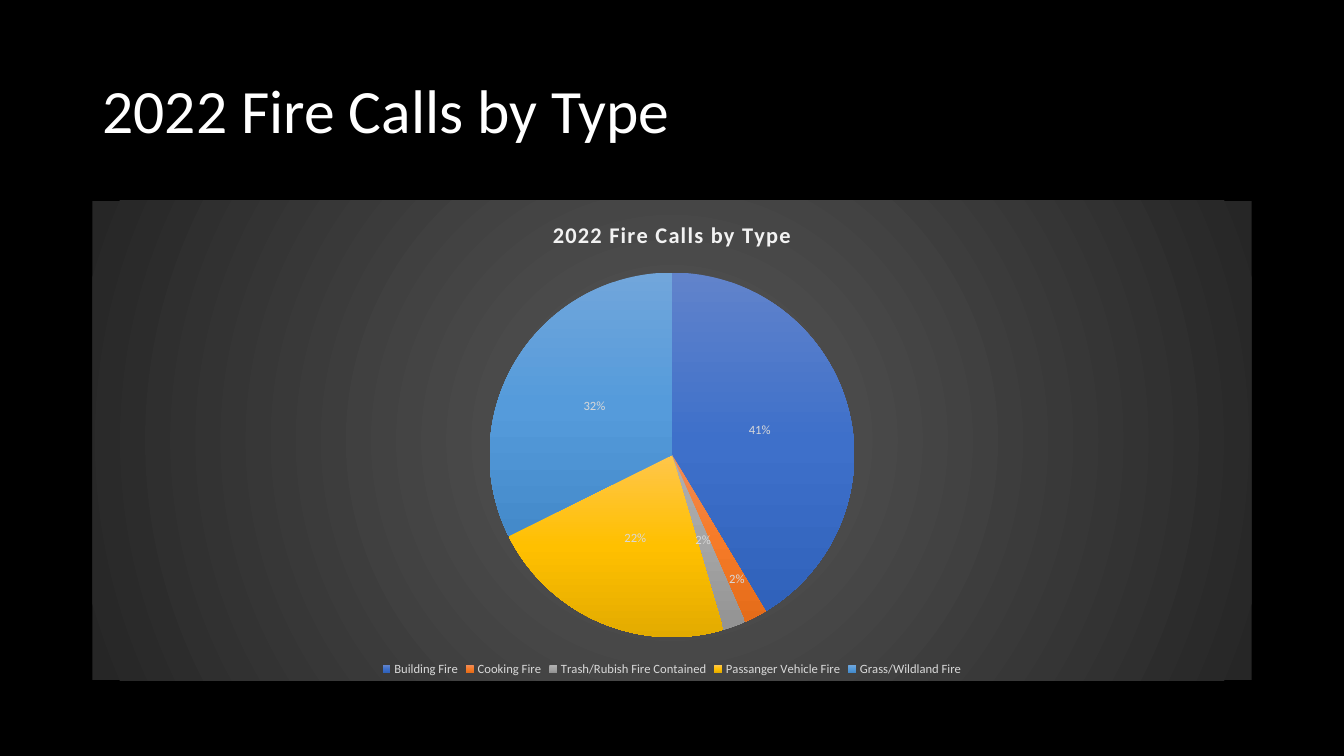
from copy import deepcopy

from pptx import Presentation, util as u
from pptx.chart.data import CategoryChartData
from pptx.dml.color import RGBColor
from pptx.enum import chart as ch, text
from pptx.oxml import parse_xml
from pptx.oxml.ns import nsdecls

PX = 9525
HUE = {"black": "000000", "white": "FFFFFF", "pale": "D9D9D9", "head": "F2F2F2",
       "mid": "595959", "edge": "262626"}
NAME = "2022 Fire Calls by Type"
# label, value, slice gradient from top to bottom
CALLS = [
    ("Building Fire", 41, ("6183CB", "3E70CA", "3062BB")),
    ("Cooking Fire", 2, ("F18C57", "F67B28", "E56C19")),
    ("Trash/Rubish Fire Contained", 2, ("AFAFAF", "A5A5A5", "939393")),
    ("Passanger Vehicle Fire", 22, ("FFC64B", "FFC000", "E3AB00")),
    ("Grass/Wildland Fire", 32, ("71A6DB", "559BDB", "448ACA")),
]
DOWN = '<a:lin ang="5400000" scaled="0"/>'
ROUND = '<a:path path="circle"><a:fillToRect l="50000" t="50000" r="50000" b="50000"/></a:path>'


def style(font, size, hue, bold=False):
    form = {"name": "Calibri", "size": u.Pt(size), "bold": bold}
    for key, val in form.items():
        setattr(font, key, val)
    font.color.rgb = RGBColor.from_string(HUE[hue])


def blend(hues, way):
    """Shape properties with evenly spaced gradient stops and no line."""
    step = 100000 // (len(hues) - 1)
    stops = "".join(f'<a:gs pos="{i * step}"><a:srgbClr val="{h}"/></a:gs>'
                    for i, h in enumerate(hues))
    return parse_xml(f'<c:spPr {nsdecls("c", "a")}><a:gradFill><a:gsLst>{stops}</a:gsLst>'
                     f'{way}</a:gradFill><a:ln><a:noFill/></a:ln></c:spPr>')


def layout(**spots):
    """Manual layout in fractions of the chart."""
    parts = "".join(f'<c:{key} val="{val}"/>' for key, val in spots.items())
    return parse_xml(f'<c:layout {nsdecls("c")}><c:manualLayout>{parts}'
                     '</c:manualLayout></c:layout>')


def nudge(group, idx, x, y):
    """Move one label, keeping the format of its group."""
    label = parse_xml(f'<c:dLbl {nsdecls("c")}><c:idx val="{idx}"/></c:dLbl>')
    label.append(layout(x=x, y=y))
    for part in group.xpath("c:numFmt | c:txPr | c:dLblPos | c:showLegendKey | c:showVal"
                            " | c:showCatName | c:showSerName | c:showPercent"
                            " | c:showBubbleSize"):
        label.append(deepcopy(part))
    group.insert(0, label)


def put_title(slide, box):
    title = slide.shapes.title
    for key, val in zip(("left", "top", "width", "height"), box):
        setattr(title, key, val * PX)
    frame = title.text_frame
    frame.text = NAME
    frame.vertical_anchor = text.MSO_ANCHOR.MIDDLE
    para = frame.paragraphs[0]
    para.alignment = text.PP_ALIGN.LEFT
    para.line_spacing = 0.9
    style(para.runs[0].font, 44, "white")


def put_pie(slide, box):
    data = CategoryChartData()
    data.categories = [call[0] for call in CALLS]
    data.add_series("Series 1", [call[1] for call in CALLS])
    chart = slide.shapes.add_chart(ch.XL_CHART_TYPE.PIE, *(n * PX for n in box), data).chart
    style(chart.font, 10, "white")

    # Heading with wide letter spacing
    chart.has_title = True
    frame = chart.chart_title.text_frame
    frame.text = NAME
    run = frame.paragraphs[0].runs[0]
    style(run.font, 16, "head", True)
    run.font._element.set("spc", "100")
    chart.chart_title.include_in_layout = False

    # Legend
    chart.has_legend = True
    chart.legend.position = ch.XL_LEGEND_POSITION.BOTTOM
    chart.legend.include_in_layout = False
    style(chart.legend.font, 9, "pale")

    # Slices and their percentages
    plot = chart.plots[0]
    plot.vary_by_categories = True
    for i, call in enumerate(CALLS):
        plot.series[0].points[i].format.fill.solid()
    root = chart._chartSpace
    for old, call in zip(root.xpath(".//c:dPt/c:spPr"), CALLS):
        old.getparent().replace(old, blend(call[2], DOWN))
    labels = plot.series[0].data_labels
    form = {"show_percentage": True, "show_value": False, "number_format": "0%",
            "number_format_is_linked": False, "position": ch.XL_LABEL_POSITION.CENTER}
    for key, val in form.items():
        setattr(labels, key, val)
    style(labels.font, 9, "pale")

    # Slide one thin slice's label outward, clear of its neighbour
    nudge(root.xpath(".//c:ser/c:dLbls")[0], 1, 0.02, 0.09)

    # Pie place and backdrop
    area = root.xpath(".//c:plotArea")[0]
    for old in area.xpath("c:layout"):
        area.remove(old)
    area.insert(0, layout(layoutTarget="inner", xMode="edge", yMode="edge",
                          x=0.34, y=0.15, w=0.32, h=0.76))
    root.xpath("c:chart")[0].addnext(blend((HUE["mid"], HUE["edge"]), ROUND))


def main():
    deck = Presentation()
    deck.slide_width, deck.slide_height = 1280 * PX, 720 * PX
    slide = deck.slides.add_slide(deck.slide_layouts[5])
    back = slide.background.fill
    back.solid()
    back.fore_color.rgb = RGBColor.from_string(HUE["black"])
    put_title(slide, (88, 39, 1104, 139))
    put_pie(slide, (88, 191, 1104, 457))
    deck.save("out.pptx")


if __name__ == "__main__":
    main()
